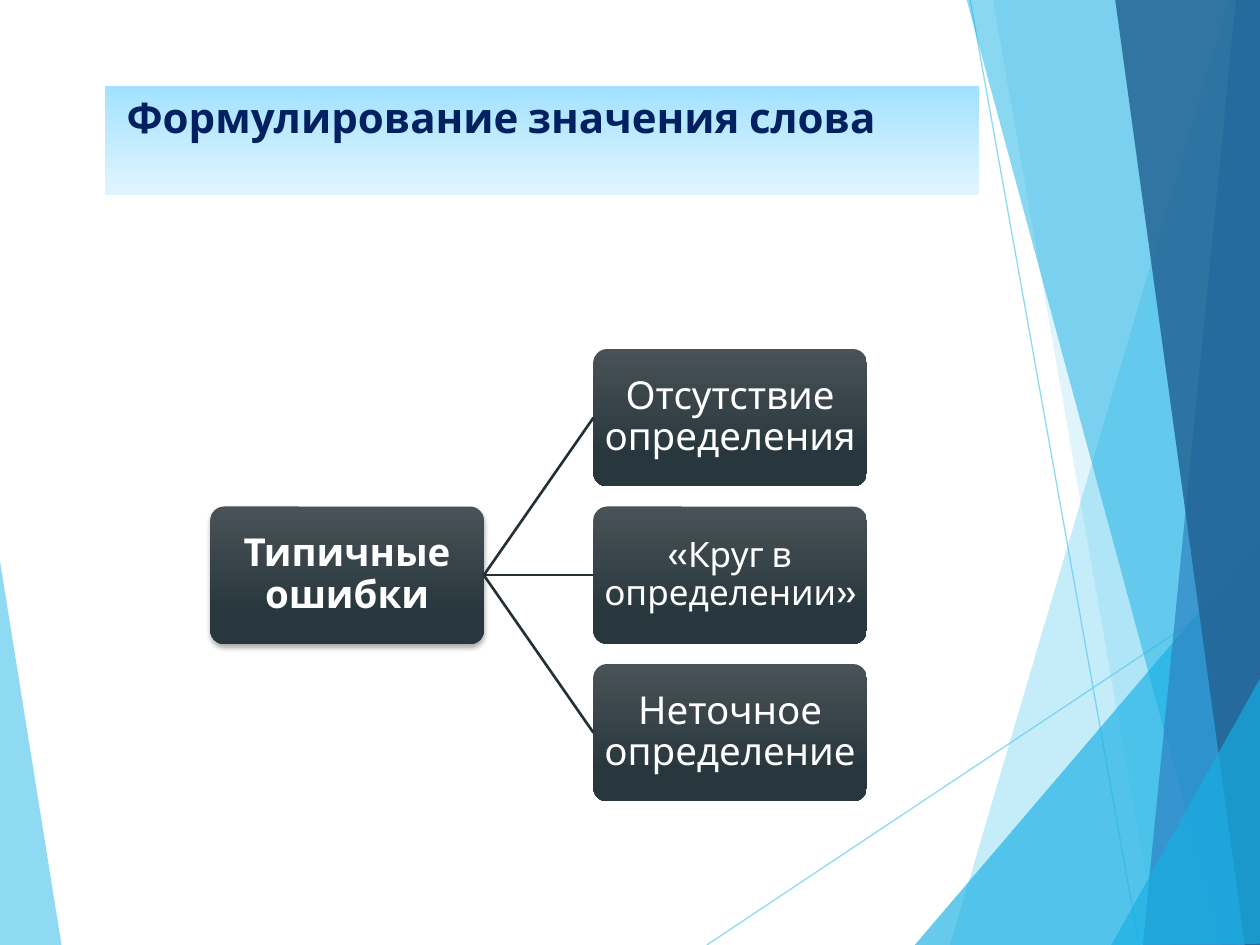
from dataclasses import dataclass

import pptx
import pptx.dml.color
import pptx.enum.shapes
import pptx.enum.text
import pptx.oxml
import pptx.oxml.ns
import pptx.util
from pptx.util import Inches

FONT = "Cabin"
COLORS = {
    "sky": "5FCBEF", "cyan": "17B0E4", "blue": "2E83C3", "deep": "226292",
    "title_top": "A2E2FF", "title_bottom": "E2F5FF", "navy": "002060",
    "box_top": "495257", "box_bottom": "28373D", "link": "233036",
    "white": "FFFFFF", "shadow": "000000",
}
BOX_W, BOX_H = 2.17, 1.09
ROOT_X, CHILD_X = 1.67, 4.71
CHILD_Y, CHILD_STEP = 2.77, 1.25


@dataclass
class Facet:
    color: str
    alpha: int
    points: list[tuple[float, float]]


@dataclass
class Ray:
    start: tuple[float, float]
    end: tuple[float, float]


@dataclass
class Box:
    text: str
    size: float = 22
    bold: bool = False


RAYS = [Ray((5.61, 7.5), (10.01, 4.57)), Ray((7.7, 0), (9.04, 7.5))]
FACETS = [
    Facet("sky", 70, [(-0.01, 4.39), (0.49, 7.51), (-0.01, 7.5)]),
    Facet("sky", 36, [(9.75, 0), (7.54, 7.5), (10.02, 7.51), (10.01, 0.01)]),
    Facet("sky", 20, [(7.88, -0.01), (9.19, 7.5), (10.01, 7.5), (10.01, -0.01)]),
    Facet("cyan", 66, [(7.26, 7.5), (10, 4.29), (10.01, 7.5)]),
    Facet("cyan", 50, [(7.67, -0.01), (9.7, 7.5), (10.01, 7.49), (10.01, -0.01)]),
    Facet("blue", 70, [(9.81, -0.01), (9.07, 7.5), (10.01, 7.5), (10, -0.01)]),
    Facet("deep", 82, [(8.85, -0.01), (9.88, 7.5), (10.02, 7.5), (10, -0.01)]),
    Facet("cyan", 66, [(8.82, 7.5), (10.02, 5.35), (10.02, 7.49)]),
]
ROOT = Box("Типичные ошибки", bold=True)
MISTAKES = [
    Box("Отсутствие определения"),
    Box("«Круг в определении»", size=20),  # keeps the long word on one line
    Box("Неточное определение"),
]


def rgb(name: str):
    return pptx.dml.color.RGBColor.from_string(COLORS[name])


def add_xml(parent, xml: str) -> None:
    ns = pptx.oxml.ns.nsdecls("a")
    parent.append(pptx.oxml.parse_xml(xml.replace("NS", ns, 1)))


def set_alpha(sp, percent: int) -> None:
    for clr in sp._element.spPr.iter(pptx.oxml.ns.qn("a:srgbClr")):
        add_xml(clr, f'<a:alpha NS val="{percent * 1000}"/>')


def set_gradient(sp, top: str, bottom: str, end: float = 1.0) -> None:
    sp.fill.gradient()
    sp.fill.gradient_angle = 270
    for stop, name, pos in zip(sp.fill.gradient_stops, (top, bottom), (0, end)):
        stop.color.rgb = rgb(name)
        stop.position = pos


def set_text(sp, text: str, *, size: float, color: str, bold: bool = False,
             align: str = "CENTER", anchor: str = "MIDDLE",
             inset: float = 0.02, spacing: float = 0.9) -> None:
    tf = sp.text_frame
    tf.word_wrap = True
    tf.auto_size = pptx.enum.text.MSO_AUTO_SIZE.NONE
    tf.vertical_anchor = pptx.enum.text.MSO_ANCHOR[anchor]
    tf.margin_left = tf.margin_right = Inches(inset)
    tf.margin_top = tf.margin_bottom = Inches(0.05)
    p = tf.paragraphs[0]
    p.alignment = pptx.enum.text.PP_ALIGN[align]
    p.line_spacing = spacing
    r = p.add_run()
    r.text = text
    r.font.name, r.font.size, r.font.bold = FONT, pptx.util.Pt(size), bold
    r.font.color.rgb = rgb(color)


def add_facet(s, facet: Facet) -> None:
    points = [(Inches(x), Inches(y)) for x, y in facet.points]
    builder = s.shapes.build_freeform(*points[0])
    builder.add_line_segments(points[1:], close=True)
    sp = builder.convert_to_shape()
    sp.shadow.inherit = False
    sp.fill.solid()
    sp.fill.fore_color.rgb = rgb(facet.color)
    set_alpha(sp, facet.alpha)
    sp.line.fill.background()


def add_line(s, start, end, color: str, width: float):
    line = s.shapes.add_connector(
        pptx.enum.shapes.MSO_CONNECTOR.STRAIGHT,
        *(Inches(v) for v in (*start, *end)))
    line.line.color.rgb = rgb(color)
    line.line.width = pptx.util.Pt(width)
    add_xml(line._element.spPr, "<a:effectLst NS/>")
    return line


def add_box(s, x: float, y: float, box: Box):
    sp = s.shapes.add_shape(
        pptx.enum.shapes.MSO_SHAPE.ROUNDED_RECTANGLE,
        Inches(x), Inches(y), Inches(BOX_W), Inches(BOX_H))
    sp.adjustments[0] = 0.1
    sp.shadow.inherit = False
    set_gradient(sp, "box_top", "box_bottom", 0.78)
    sp.line.fill.background()
    set_text(sp, box.text, size=box.size, color="white", bold=box.bold)
    return sp


def add_shadow(sp) -> None:
    effects = sp._element.spPr.find(pptx.oxml.ns.qn("a:effectLst"))
    add_xml(effects,
            f'<a:outerShdw NS blurRad="{pptx.util.Pt(3)}" dist="{pptx.util.Pt(2)}" '
            f'dir="5400000" rotWithShape="0"><a:srgbClr val="{COLORS["shadow"]}">'
            '<a:alpha val="35000"/></a:srgbClr></a:outerShdw>')


def main() -> None:
    prs = pptx.Presentation()
    prs.slide_width, prs.slide_height = Inches(10), Inches(7.5)
    s = prs.slides.add_slide(prs.slide_layouts[5])

    # Title band
    title = s.shapes.title
    title.left, title.top = Inches(0.83), Inches(0.68)
    title.width, title.height = Inches(6.94), Inches(0.87)
    set_gradient(title, "title_top", "title_bottom")
    set_text(title, " Формулирование значения слова", size=24, color="navy",
             bold=True, align="LEFT", anchor="TOP", inset=0.1, spacing=1.0)

    # Faceted background
    add_facet(s, FACETS[0])
    for ray in RAYS:
        set_alpha(add_line(s, ray.start, ray.end, "sky", 0.75), 70)
    for facet in FACETS[1:]:
        add_facet(s, facet)

    # Tree of typical mistakes
    root_y = CHILD_Y + CHILD_STEP
    root = add_box(s, ROOT_X, root_y, ROOT)
    add_shadow(root)
    for i, box in enumerate(MISTAKES):
        y = CHILD_Y + i * CHILD_STEP
        child = add_box(s, CHILD_X, y, box)
        link = add_line(s, (ROOT_X + BOX_W, root_y + BOX_H / 2),
                        (CHILD_X, y + BOX_H / 2), "link", 1.5)
        link.begin_connect(root, 3)
        link.end_connect(child, 1)

    prs.save("out.pptx")


if __name__ == "__main__":
    main()
